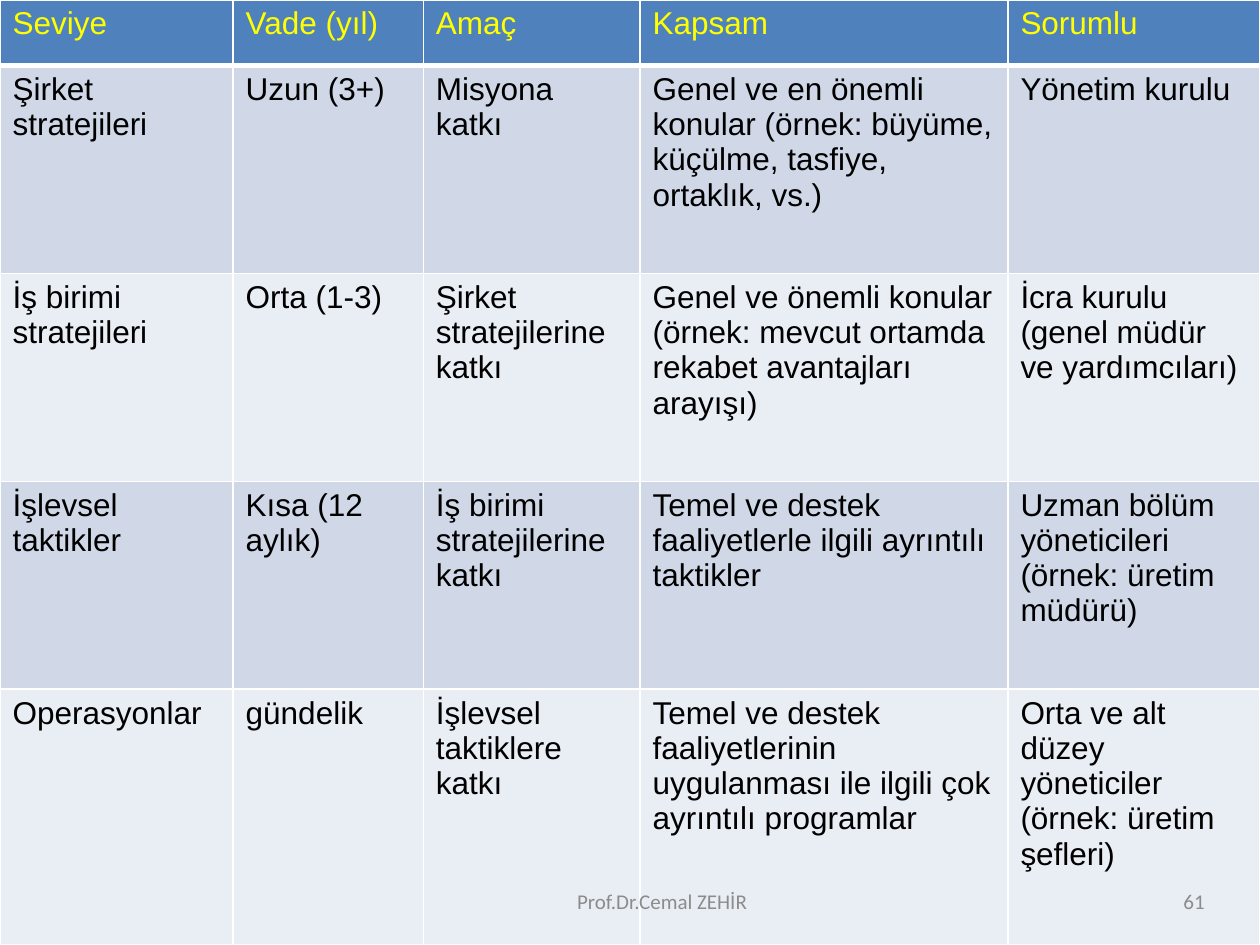
from lxml import etree
from pptx import Presentation
from pptx import util as u
from pptx.dml.color import RGBColor
from pptx.enum import text
from pptx.oxml.ns import qn

PX = 9144  # EMU per px, 100 px to the inch
COLORS = {"header": "4F81BD", "odd": "D0D8E8", "even": "E9EDF4", "border": "FFFFFF",
          "title": "FFFF00", "body": "000000", "footer": "8C8C8C"}
COLS = [185, 151, 172, 292, 200]
ROWS = [52, 165, 165, 165, 203]
CELLS = [
    ["Seviye", "Vade (yıl)", "Amaç", "Kapsam", "Sorumlu"],
    ["Şirket stratejileri", "Uzun (3+)", "Misyona katkı",
     "Genel ve en önemli konular (örnek: büyüme, küçülme, tasfiye, ortaklık, vs.)",
     "Yönetim kurulu"],
    ["İş birimi stratejileri", "Orta (1-3)", "Şirket stratejilerine katkı",
     "Genel ve önemli konular (örnek: mevcut ortamda rekabet avantajları arayışı)",
     "İcra kurulu (genel müdür ve yardımcıları)"],
    ["İşlevsel taktikler", "Kısa (12 aylık)", "İş birimi stratejilerine katkı",
     "Temel ve destek faaliyetlerle ilgili ayrıntılı taktikler",
     "Uzman bölüm yöneticileri (örnek: üretim müdürü)"],
    ["Operasyonlar", "gündelik", "İşlevsel taktiklere katkı",
     "Temel ve destek faaliyetlerinin uygulanması ile ilgili çok ayrıntılı programlar",
     "Orta ve alt düzey yöneticiler (örnek: üretim şefleri)"],
]


def add_run(p, words, font, size, color):
    r = p.add_run()
    r.text = words
    r.font.name = font
    r.font.size = u.Pt(size)
    r.font.bold = False
    r.font.color.rgb = RGBColor.from_string(COLORS[color])


def set_borders(cell, top, bottom):
    """Draw all four sides; top and bottom widths are in points."""
    tcPr = cell._tc.get_or_add_tcPr()
    sides = [("a:lnL", 1), ("a:lnR", 1), ("a:lnT", top), ("a:lnB", bottom)]
    for i, (tag, width) in enumerate(sides):
        ln = etree.Element(qn(tag), w=str(u.Pt(width)))
        fill = etree.SubElement(ln, qn("a:solidFill"))
        etree.SubElement(fill, qn("a:srgbClr"), val=COLORS["border"])
        tcPr.insert(i, ln)


prs = Presentation()
prs.slide_width, prs.slide_height = 1000 * PX, 750 * PX
s = prs.slides.add_slide(prs.slide_layouts[6])

# Table of strategy levels
tbl = s.shapes.add_table(len(ROWS), len(COLS), 0, 0, 1000 * PX, 750 * PX).table
for col, width in zip(tbl.columns, COLS):
    col.width = width * PX
for row, height in zip(tbl.rows, ROWS):
    row.height = height * PX
for i, line in enumerate(CELLS):
    fill = "header" if i == 0 else "odd" if i % 2 else "even"
    for j, words in enumerate(line):
        cell = tbl.cell(i, j)
        cell.fill.solid()
        cell.fill.fore_color.rgb = RGBColor.from_string(COLORS[fill])
        set_borders(cell, 3 if i == 1 else 1, 3 if i == 0 else 1)
        add_run(cell.text_frame.paragraphs[0], words, "Arial", 18, "body" if i else "title")

# Footer and page number
for x, width, align, words in [(367, 317, text.PP_ALIGN.CENTER, "Prof.Dr.Cemal ZEHİR"),
                               (733, 233, text.PP_ALIGN.RIGHT, "61")]:
    tf = s.shapes.add_textbox(x * PX, 695 * PX, width * PX, 40 * PX).text_frame
    tf.word_wrap = True
    tf.vertical_anchor = text.MSO_ANCHOR.MIDDLE
    p = tf.paragraphs[0]
    p.alignment = align
    add_run(p, words, "Calibri", 12, "footer")

prs.save("out.pptx")
